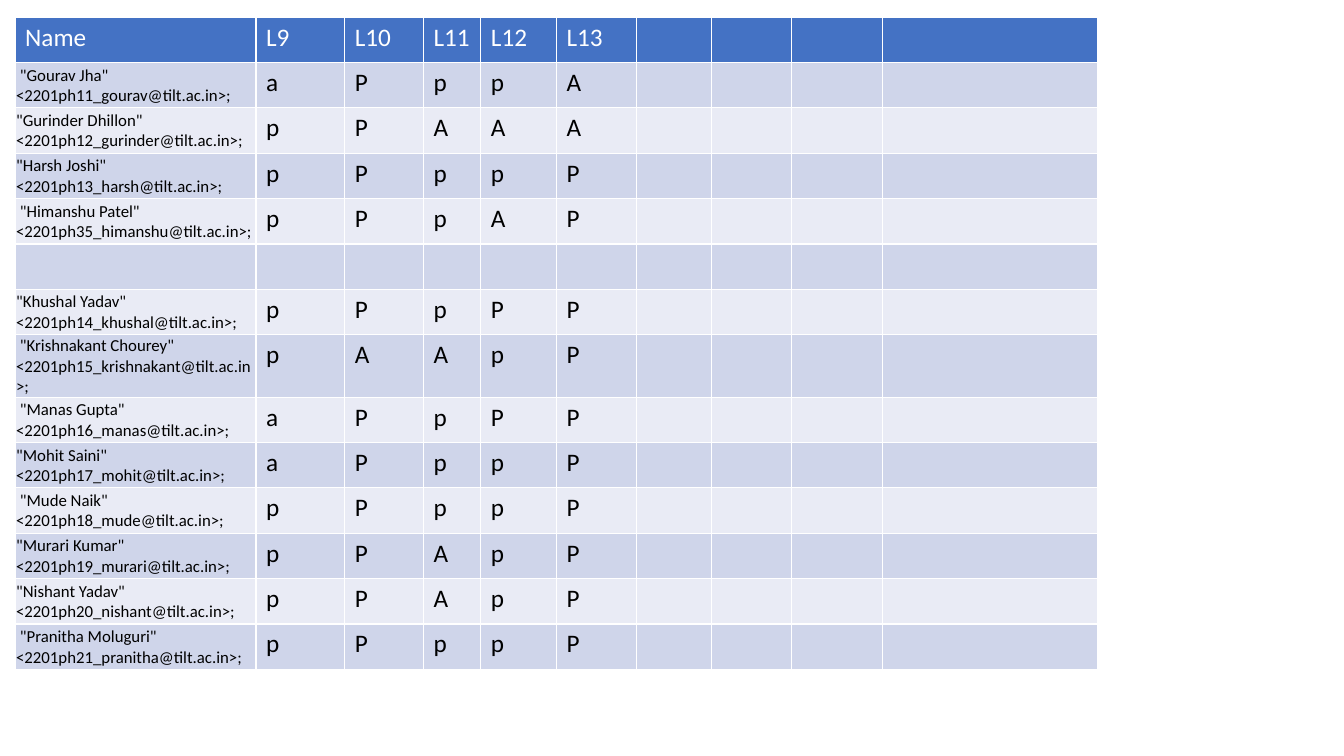
from pptx import Presentation
from pptx.dml.color import RGBColor
from pptx.enum import text
from pptx.util import Inches, Pt

WHITE = RGBColor(0xFF, 0xFF, 0xFF)
BLACK = RGBColor(0x00, 0x00, 0x00)
HEADER_BLUE = RGBColor(0x44, 0x72, 0xC4)
BANDS = [RGBColor(0xCF, 0xD5, 0xEA), RGBColor(0xE9, 0xEB, 0xF5)]

COLUMN_WIDTHS = [2.39, 0.88, 0.78, 0.57, 0.75, 0.79, 0.75, 0.79, 0.9, 2.14]
ROW_HEIGHT = 0.45
HEADINGS = ["Name", "L9", "L10", "L11", "L12", "L13"]
STUDENTS = [
    (' "Gourav Jha" <2201ph11_gourav@tilt.ac.in>;', "aPppA"),
    ('"Gurinder Dhillon" <2201ph12_gurinder@tilt.ac.in>;', "pPAAA"),
    ('"Harsh Joshi" <2201ph13_harsh@tilt.ac.in>;', "pPppP"),
    (' "Himanshu Patel" <2201ph35_himanshu@tilt.ac.in>;', "pPpAP"),
    ("", ""),
    ('"Khushal Yadav" <2201ph14_khushal@tilt.ac.in>;', "pPpPP"),
    (' "Krishnakant Chourey" <2201ph15_krishnakant@tilt.ac.in>;', "pAApP"),
    (' "Manas Gupta" <2201ph16_manas@tilt.ac.in>;', "aPpPP"),
    ('"Mohit Saini" <2201ph17_mohit@tilt.ac.in>;', "aPppP"),
    (' "Mude Naik" <2201ph18_mude@tilt.ac.in>;', "pPppP"),
    ('"Murari Kumar" <2201ph19_murari@tilt.ac.in>;', "pPApP"),
    ('"Nishant Yadav" <2201ph20_nishant@tilt.ac.in>;', "pPApP"),
    (' "Pranitha Moluguri" <2201ph21_pranitha@tilt.ac.in>;', "pPppP"),
]


def fill_cell(cell, words, fill, color, size=18):
    cell.fill.solid()
    cell.fill.fore_color.rgb = fill
    cell.text = words
    font = cell.text_frame.paragraphs[0].font
    font.name = "Calibri"
    font.size = Pt(size)
    font.bold = False
    font.color.rgb = color


def fill_row(row, entries, fill, color):
    for index, cell in enumerate(row.cells):
        words = entries[index] if index < len(entries) else ""
        fill_cell(cell, words, fill, color)


def fill_student(row, name, marks, fill):
    fill_row(row, ["", *marks], fill, BLACK)
    if name:
        cell = row.cells[0]
        fill_cell(cell, name, fill, BLACK, 12)
        cell.vertical_anchor = text.MSO_ANCHOR.MIDDLE
        cell.margin_left = cell.margin_top = cell.margin_right = Inches(0.01)
        cell.margin_bottom = 0


def add_attendance(page):
    row_count = len(STUDENTS) + 1
    frame = page.shapes.add_table(
        row_count, len(COLUMN_WIDTHS), Inches(0.15), Inches(0.17),
        Inches(sum(COLUMN_WIDTHS)), Inches(ROW_HEIGHT * row_count))
    table = frame.table
    for column, width in zip(table.columns, COLUMN_WIDTHS):
        column.width = Inches(width)
    for row in table.rows:
        row.height = Inches(ROW_HEIGHT)
    fill_row(table.rows[0], HEADINGS, HEADER_BLUE, WHITE)
    for index, (name, marks) in enumerate(STUDENTS):
        fill_student(table.rows[index + 1], name, marks, BANDS[index % 2])


def main():
    deck = Presentation()
    deck.slide_width = Inches(13.33)
    deck.slide_height = Inches(7.5)
    page = deck.slides.add_slide(deck.slide_layouts[6])
    add_attendance(page)
    deck.save("out.pptx")


if __name__ == "__main__":
    main()
